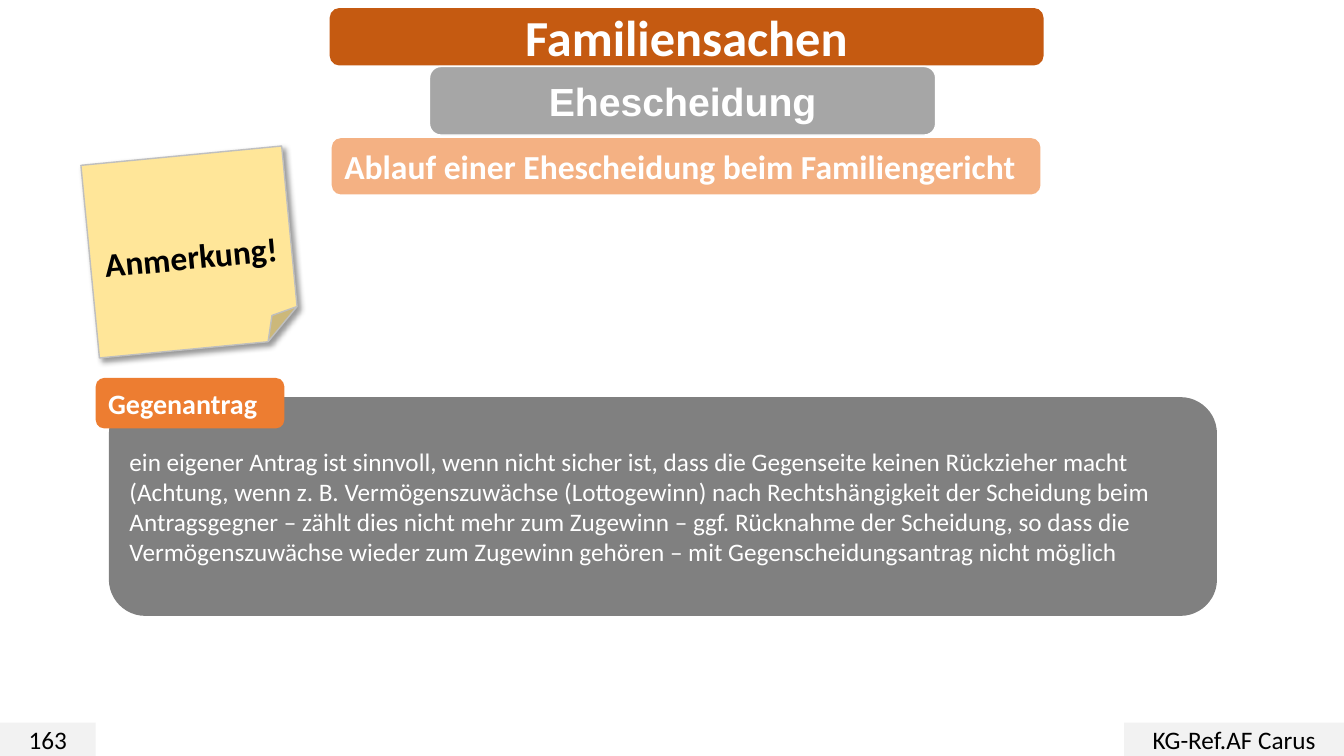
import pptx
import pptx.dml.color
import pptx.enum.shapes
import pptx.enum.text
import pptx.oxml
import pptx.oxml.ns
import pptx.util
from pptx.util import Inches

SHAPE = pptx.enum.shapes.MSO_SHAPE
ALIGN = pptx.enum.text.PP_ALIGN
MIDDLE = pptx.enum.text.MSO_ANCHOR.MIDDLE

THEME = {
    "colors": {
        "heading": "C55A11", "topic": "A6A6A6", "subtopic": "F4B183",
        "body": "808080", "label": "ED7D31", "note": "FFE699",
        "footer": "F2F2F2", "note_edge": "BFBFBF", "light": "FFFFFF",
        "dark": "000000",
    },
    "sizes": {
        "heading": 36, "topic": 28, "subtopic": 24, "note": 24,
        "label": 20, "body": 18, "footer": 18,
    },
    "fonts": {"main": "Calibri", "topic": "Arial"},
}

HEADING = {"text": "Familiensachen", "role": "heading", "box": (3.27, 0.08, 7.08, 0.57)}

PANELS = [
    {"text": "163", "role": "footer", "box": (0, 7.17, 0.95, 0.33),
     "kind": SHAPE.RECTANGLE, "ink": "dark", "bold": False},
    {"text": "KG-Ref.AF Carus", "role": "footer", "box": (11.15, 7.17, 2.18, 0.33),
     "kind": SHAPE.RECTANGLE, "ink": "dark", "bold": False},
    {"text": "Ehescheidung", "role": "topic", "box": (4.26, 0.66, 5.02, 0.68),
     "edge": "light", "font": "topic"},
    {"text": "Ablauf einer Ehescheidung beim Familiengericht", "role": "subtopic",
     "box": (3.29, 1.37, 7.03, 0.56), "align": ALIGN.LEFT},
    {"text": "ein eigener Antrag ist sinnvoll, wenn nicht sicher ist, dass die "
             "Gegenseite keinen Rückzieher macht (Achtung, wenn z. B. "
             "Vermögenszuwächse (Lottogewinn) nach Rechtshängigkeit der Scheidung "
             "beim Antragsgegner – zählt dies nicht mehr zum Zugewinn – ggf. "
             "Rücknahme der Scheidung, so dass die Vermögenszuwächse wieder zum "
             "Zugewinn gehören – mit Gegenscheidungsantrag nicht möglich",
     "role": "body", "box": (1.08, 3.94, 10.99, 2.17), "align": ALIGN.LEFT, "bold": False},
    {"text": "Gegenantrag", "role": "label", "box": (0.95, 3.75, 1.87, 0.5),
     "align": ALIGN.LEFT},
    {"text": "Anmerkung!", "role": "note", "box": (0.89, 1.54, 2, 1.92),
     "kind": SHAPE.FOLDED_CORNER, "ink": "dark", "edge": "note_edge",
     "turn": 354.5, "top_inset": 0.45, "shadow": True},
]


def color(name):
    return pptx.dml.color.RGBColor.from_string(THEME["colors"][name])


def set_all(target, values):
    for name, value in values.items():
        setattr(target, name, value)


def place(shape, box):
    set_all(shape, dict(zip(("left", "top", "width", "height"), map(Inches, box))))


def write(shape, part):
    frame = shape.text_frame
    frame.text = part["text"]
    set_all(frame, {
        "word_wrap": True, "vertical_anchor": MIDDLE,
        "auto_size": pptx.enum.text.MSO_AUTO_SIZE.NONE,
        "margin_left": Inches(0.1), "margin_right": Inches(0.1),
        "margin_top": Inches(part.get("top_inset", 0.05)),
        "margin_bottom": Inches(0.05),
    })
    paragraph = frame.paragraphs[0]
    set_all(paragraph, {"alignment": part.get("align", ALIGN.CENTER), "line_spacing": 1.0})
    font = paragraph.runs[0].font
    set_all(font, {
        "name": THEME["fonts"][part.get("font", "main")],
        "size": pptx.util.Pt(THEME["sizes"][part["role"]]),
        "bold": part.get("bold", True),
    })
    font.color.rgb = color(part.get("ink", "light"))


def cast_shadow(panel):
    effects = panel.element.spPr.find(pptx.oxml.ns.qn("a:effectLst"))
    effects.append(pptx.oxml.parse_xml(
        f'<a:outerShdw {pptx.oxml.ns.nsdecls("a")} blurRad="{pptx.util.Pt(4)}" '
        f'dist="{pptx.util.Pt(3)}" dir="2700000" algn="tl" rotWithShape="0">'
        f'<a:srgbClr val="{THEME["colors"]["dark"]}"><a:alpha val="40000"/></a:srgbClr>'
        '</a:outerShdw>'))


def add_panel(slide, part):
    panel = slide.shapes.add_shape(
        part.get("kind", SHAPE.ROUNDED_RECTANGLE), *map(Inches, part["box"]))
    panel.rotation = part.get("turn", 0)
    panel.shadow.inherit = False
    panel.fill.solid()
    panel.fill.fore_color.rgb = color(part["role"])
    if "edge" in part:
        panel.line.color.rgb = color(part["edge"])
        panel.line.width = pptx.util.Pt(1)
    else:
        panel.line.fill.background()
    if part.get("shadow"):
        cast_shadow(panel)
    return panel


def main():
    deck = pptx.Presentation()
    set_all(deck, {"slide_width": Inches(13.33), "slide_height": Inches(7.5)})
    slide = deck.slides.add_slide(deck.slide_layouts[5])

    heading_bar = add_panel(slide, HEADING)
    heading = slide.shapes.title
    place(heading, HEADING["box"])
    write(heading, HEADING)
    heading_bar.element.addnext(heading.element)

    for part in PANELS:
        write(add_panel(slide, part), part)

    deck.save("out.pptx")


if __name__ == "__main__":
    main()
